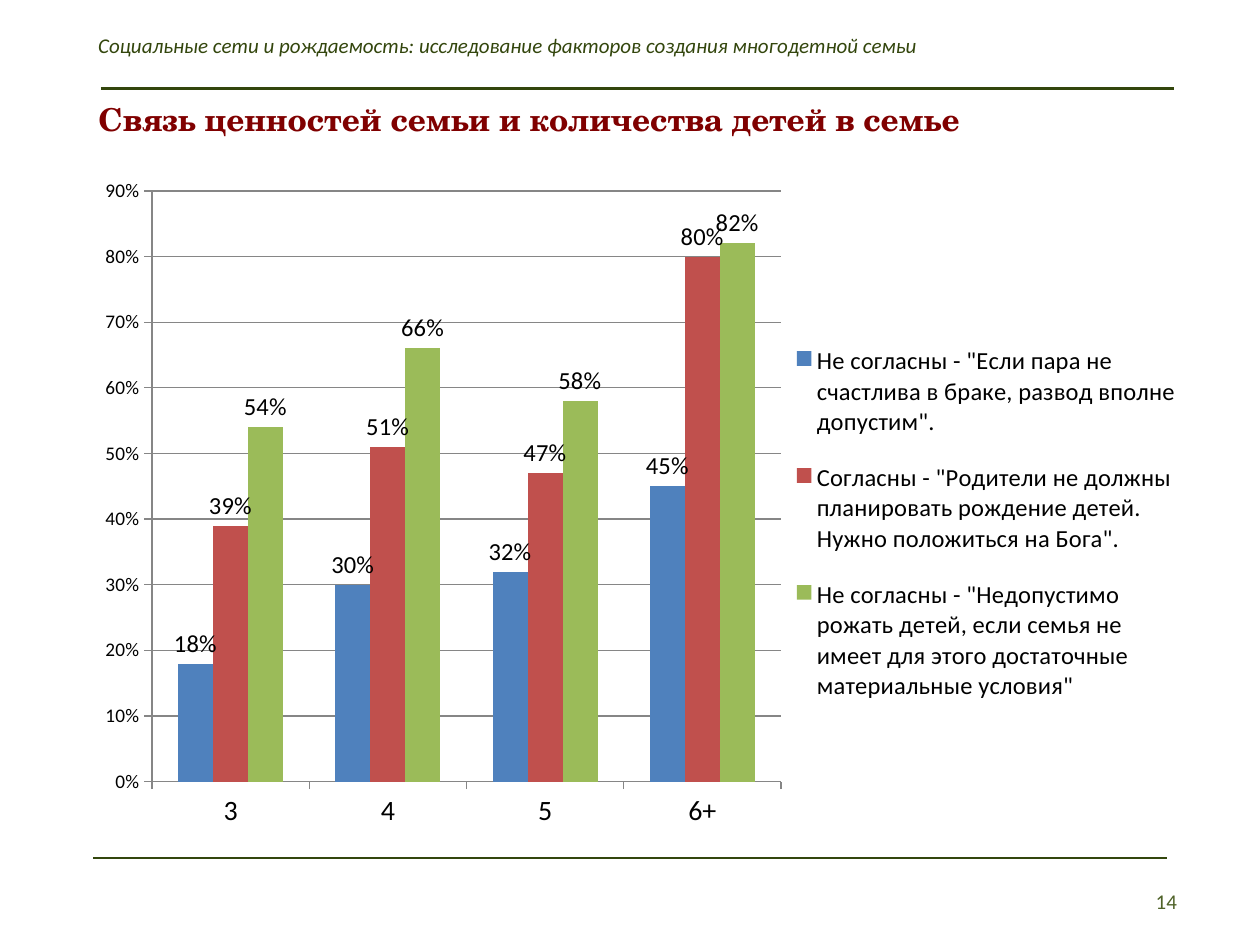
from lxml.etree import SubElement
from pptx import Presentation
from pptx.chart.data import CategoryChartData
from pptx.dml.color import RGBColor
from pptx.enum.chart import XL_CHART_TYPE, XL_LABEL_POSITION, XL_LEGEND_POSITION, XL_TICK_MARK
from pptx.enum.shapes import MSO_CONNECTOR
from pptx.enum.text import MSO_ANCHOR, PP_ALIGN
from pptx.oxml import parse_xml
from pptx.oxml.ns import nsdecls, qn
from pptx.util import Inches, Pt

GREEN = "33460D"
GROUPS = ["3", "4", "5", "6+"]
SERIES = [
    ('Не согласны - "Если пара не счастлива в браке, развод вполне допустим".',
     (0.18, 0.30, 0.32, 0.45), "4F81BD"),
    ('Согласны - "Родители не должны планировать рождение детей. '
     'Нужно положиться на Бога". ',
     (0.39, 0.51, 0.47, 0.80), "C0504D"),
    ('Не согласны - "Недопустимо рожать детей, если семья не имеет '
     'для этого достаточные материальные условия"',
     (0.54, 0.66, 0.58, 0.82), "9BBB59"),
]


def color(code):
    return RGBColor.from_string(code)


def style(font, size, code="000000", name="Calibri", bold=False, italic=False):
    font.name, font.size = name, Pt(size)
    font.bold, font.italic = bold, italic
    font.color.rgb = color(code)


def write(shape, box, text, align=PP_ALIGN.LEFT, anchor=MSO_ANCHOR.TOP, **look):
    """Place a text shape in its box and fill it with one paragraph."""
    shape.left, shape.top, shape.width, shape.height = map(Inches, box)
    frame = shape.text_frame
    frame.word_wrap = True
    frame.vertical_anchor = anchor
    frame.text = text
    para = frame.paragraphs[0]
    para.alignment = align
    style(para.font, **look)


def add_text(slide, box, text, **look):
    write(slide.shapes.add_textbox(0, 0, 0, 0), box, text, **look)


def add_rule(slide, left, top, width, weight):
    line = slide.shapes.add_connector(
        MSO_CONNECTOR.STRAIGHT, Inches(left), Inches(top),
        Inches(left + width), Inches(top))
    line.line.color.rgb = color(GREEN)
    line.line.width = Pt(weight)
    SubElement(line._element.spPr, qn("a:effectLst"))


def add_header(slide, left, top, width):
    add_text(slide, (left, top, width, 0.3),
             "Социальные сети и рождаемость: исследование факторов "
             "создания многодетной семьи",
             size=12, code=GREEN, italic=True)
    add_rule(slide, left + 0.12, top + 0.49, 8.52, 1.5)
    write(slide.shapes.title, (left, top + 0.53, 8.32, 0.4),
          "Связь ценностей семьи и количества детей в семье",
          size=18, code="800000", name="TeX Gyre Schola", bold=True)


def add_footer(slide, left, top):
    add_rule(slide, left, top, 8.52, 1)
    add_text(slide, (left + 8.17, top + 0.14, 0.53, 0.4), "14",
             align=PP_ALIGN.RIGHT, anchor=MSO_ANCHOR.MIDDLE,
             size=12, code="4F6228")


def set_layout(part, x, y, w, h, inner=False):
    """Fix a chart part at fractions of the chart's size."""
    for old in part.findall(qn("c:layout")):
        part.remove(old)
    target = '<c:layoutTarget val="inner"/>' if inner else ""
    sizes = "".join(f'<c:{key} val="{val}"/>'
                    for key, val in zip("xywh", (x, y, w, h)))
    layout = parse_xml(
        f'<c:layout {nsdecls("c")}><c:manualLayout>{target}'
        f'<c:xMode val="edge"/><c:yMode val="edge"/>{sizes}'
        '</c:manualLayout></c:layout>')
    part.insert(0 if inner else 1, layout)


def style_axis(axis, size):
    style(axis.tick_labels.font, size)
    axis.major_tick_mark = XL_TICK_MARK.OUTSIDE
    axis.minor_tick_mark = XL_TICK_MARK.NONE
    axis.format.line.color.rgb = color("868686")
    axis.format.line.width = Pt(0.75)


def add_columns(slide, left, top, width, height):
    data = CategoryChartData(number_format="0%")
    data.categories = GROUPS
    for name, values, _ in SERIES:
        data.add_series(name, values)
    chart = slide.shapes.add_chart(
        XL_CHART_TYPE.COLUMN_CLUSTERED, Inches(left), Inches(top),
        Inches(width), Inches(height), data).chart
    chart.has_title = False
    style(chart.font, 10)

    style_axis(chart.category_axis, 16)
    scale = chart.value_axis
    style_axis(scale, 11)
    scale.minimum_scale, scale.maximum_scale, scale.major_unit = 0, 0.9, 0.1
    scale.tick_labels.number_format = "0%"
    scale.tick_labels.number_format_is_linked = False
    grid = scale.major_gridlines.format.line
    grid.color.rgb = color("868686")
    grid.width = Pt(0.75)

    plot = chart.plots[0]
    plot.gap_width, plot.overlap = 150, 0
    plot.vary_by_categories = False
    for series, (_, _, code) in zip(plot.series, SERIES):
        series.format.fill.solid()
        series.format.fill.fore_color.rgb = color(code)
        labels = series.data_labels
        labels.show_value = True
        labels.number_format = "0%"
        labels.number_format_is_linked = False
        labels.position = XL_LABEL_POSITION.OUTSIDE_END
        style(labels.font, 14)

    chart.has_legend = True
    legend = chart.legend
    legend.position = XL_LEGEND_POSITION.RIGHT
    legend.include_in_layout = False
    style(legend.font, 14)
    area = chart._chartSpace.chart.plotArea
    set_layout(area, 0.06, 0.04, 0.57, 0.87, inner=True)
    set_layout(legend._element, 0.65, 0.23, 0.35, 0.6)


def main():
    deck = Presentation()
    deck.slide_width, deck.slide_height = Inches(10), Inches(7.5)
    slide = deck.slides.add_slide(deck.slide_layouts[5])
    add_header(slide, 0.68, 0.21, 8.58)
    add_columns(slide, 0.68, 1.3, 8.76, 5.39)
    add_footer(slide, 0.74, 6.81)
    deck.save("out.pptx")


if __name__ == "__main__":
    main()
